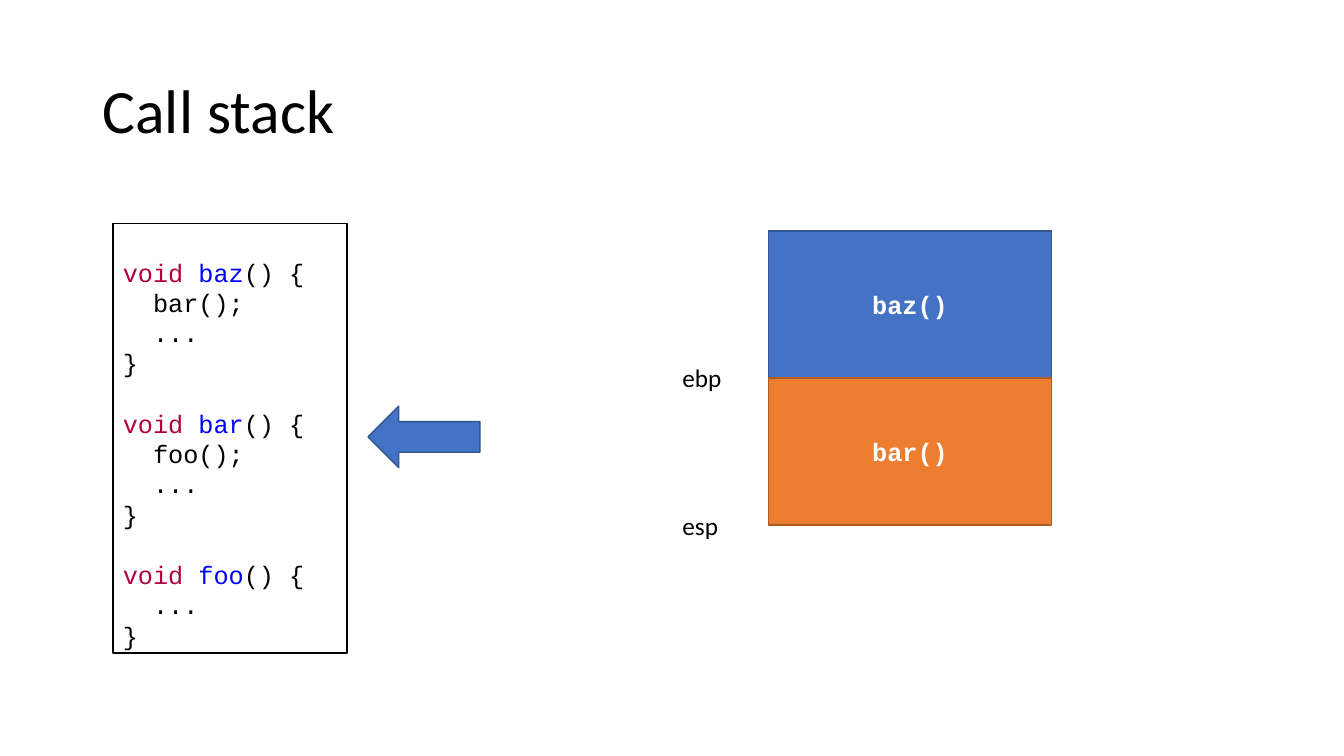
from dataclasses import dataclass

from pptx import Presentation
from pptx.dml.color import RGBColor
from pptx.enum.shapes import MSO_SHAPE as Preset
from pptx.enum.text import MSO_ANCHOR as Anchor, PP_ALIGN as Align
from pptx.shapes.autoshape import Shape
from pptx.slide import Slide
from pptx.util import Emu, Pt

EMU_PER_PX = 9144  # 100 px to the inch

BLACK = RGBColor(0x00, 0x00, 0x00)
WHITE = RGBColor(0xFF, 0xFF, 0xFF)
KEYWORD = RGBColor(0xB0, 0x00, 0x40)
FUNCTION = RGBColor(0x00, 0x00, 0xFF)
BLUE = RGBColor(0x44, 0x72, 0xC4)
DARK_BLUE = RGBColor(0x32, 0x54, 0x91)
ORANGE = RGBColor(0xED, 0x7D, 0x31)
DARK_ORANGE = RGBColor(0xAF, 0x5C, 0x24)

BODY_FONT = "Calibri"
CODE_FONT = "Courier New"
CODE_LINE = Pt(21.6)
CODE_LINE_PX = 30
CODE_INDENT_PX = 30

FRAME_LEFT, FRAME_TOP = 762, 229
FRAME_WIDTH, FRAME_HEIGHT = 281, 146
LABEL_LEFT, LABEL_RISE = 667, 20


@dataclass(frozen=True)
class Box:
    left: int
    top: int
    width: int
    height: int

    def emu(self) -> tuple[Emu, ...]:
        return tuple(px(n) for n in (self.left, self.top, self.width, self.height))


@dataclass(frozen=True)
class StackFrame:
    call: str
    register: str
    fill: RGBColor
    line: RGBColor


@dataclass(frozen=True)
class Function:
    name: str
    body: tuple[str, ...]


FRAMES = (
    StackFrame("baz()", "ebp", BLUE, DARK_BLUE),
    StackFrame("bar()", "esp", ORANGE, DARK_ORANGE),
)
FUNCTIONS = (
    Function("baz", ("bar();", "...")),
    Function("bar", ("foo();", "...")),
    Function("foo", ("...",)),
)


def px(length: int) -> Emu:
    return Emu(length * EMU_PER_PX)


def add_filled(page: Slide, preset: Preset, box: Box, fill: RGBColor, line: RGBColor) -> Shape:
    shape = page.shapes.add_shape(preset, *box.emu())
    shape.shadow.inherit = False
    shape.fill.solid()
    shape.fill.fore_color.rgb = fill
    shape.line.color.rgb = line
    shape.line.width = Pt(1)
    return shape


def add_text(page: Slide, box: Box, text: str, size: int) -> Shape:
    shape = page.shapes.add_textbox(*box.emu())
    shape.text_frame.word_wrap = True
    para = shape.text_frame.paragraphs[0]
    para.text = text
    para.font.name = BODY_FONT
    para.font.size = Pt(size)
    para.font.color.rgb = BLACK
    return shape


def add_title(page: Slide) -> None:
    title = add_text(page, Box(92, 40, 1150, 145), "Call stack", 44)
    title.text_frame.vertical_anchor = Anchor.MIDDLE
    title.text_frame.paragraphs[0].line_spacing = 0.9


def add_code(page: Slide) -> None:
    listing = add_filled(page, Preset.RECTANGLE, Box(112, 222, 232, 426), WHITE, BLACK)
    frame = listing.text_frame
    frame.vertical_anchor = Anchor.MIDDLE
    frame.margin_top = px(5 + CODE_LINE_PX)
    for index, function in enumerate(FUNCTIONS):
        signature = frame.add_paragraph() if index else frame.paragraphs[0]
        if index:
            signature.space_before = CODE_LINE
        for text, color in (("void ", KEYWORD), (function.name, FUNCTION), ("() {", BLACK)):
            span = signature.add_run()
            span.text = text
            span.font.color.rgb = color
        for statement in function.body:
            para = frame.add_paragraph()
            para.text = statement
            para._p.get_or_add_pPr().set("marL", str(px(CODE_INDENT_PX)))
        frame.add_paragraph().text = "}"
    for para in frame.paragraphs:
        para.alignment = Align.LEFT
        para.line_spacing = CODE_LINE
        para.font.name = CODE_FONT
        para.font.size = Pt(18)
        para.font.color.rgb = BLACK


def add_stack(page: Slide) -> None:
    """Stack the call frames, each with its register label at the bottom edge."""
    for index, frame in enumerate(FRAMES):
        top = FRAME_TOP + index * FRAME_HEIGHT
        box = Box(FRAME_LEFT, top, FRAME_WIDTH, FRAME_HEIGHT)
        shape = add_filled(page, Preset.RECTANGLE, box, frame.fill, frame.line)
        shape.text_frame.vertical_anchor = Anchor.MIDDLE
        para = shape.text_frame.paragraphs[0]
        para.text = frame.call
        para.alignment = Align.CENTER
        para.font.name = CODE_FONT
        para.font.size = Pt(18)
        para.font.bold = True
        para.font.color.rgb = WHITE
        label = Box(LABEL_LEFT, top + FRAME_HEIGHT - LABEL_RISE, 59, 40)
        add_text(page, label, frame.register, 18).text_frame.word_wrap = False


def main() -> None:
    deck = Presentation()
    deck.slide_width, deck.slide_height = px(1333), px(750)
    page = deck.slides.add_slide(deck.slide_layouts[6])
    add_title(page)
    add_code(page)
    add_stack(page)
    add_filled(page, Preset.LEFT_ARROW, Box(365, 403, 111, 61), BLUE, DARK_BLUE)
    deck.save("out.pptx")


if __name__ == "__main__":
    main()
